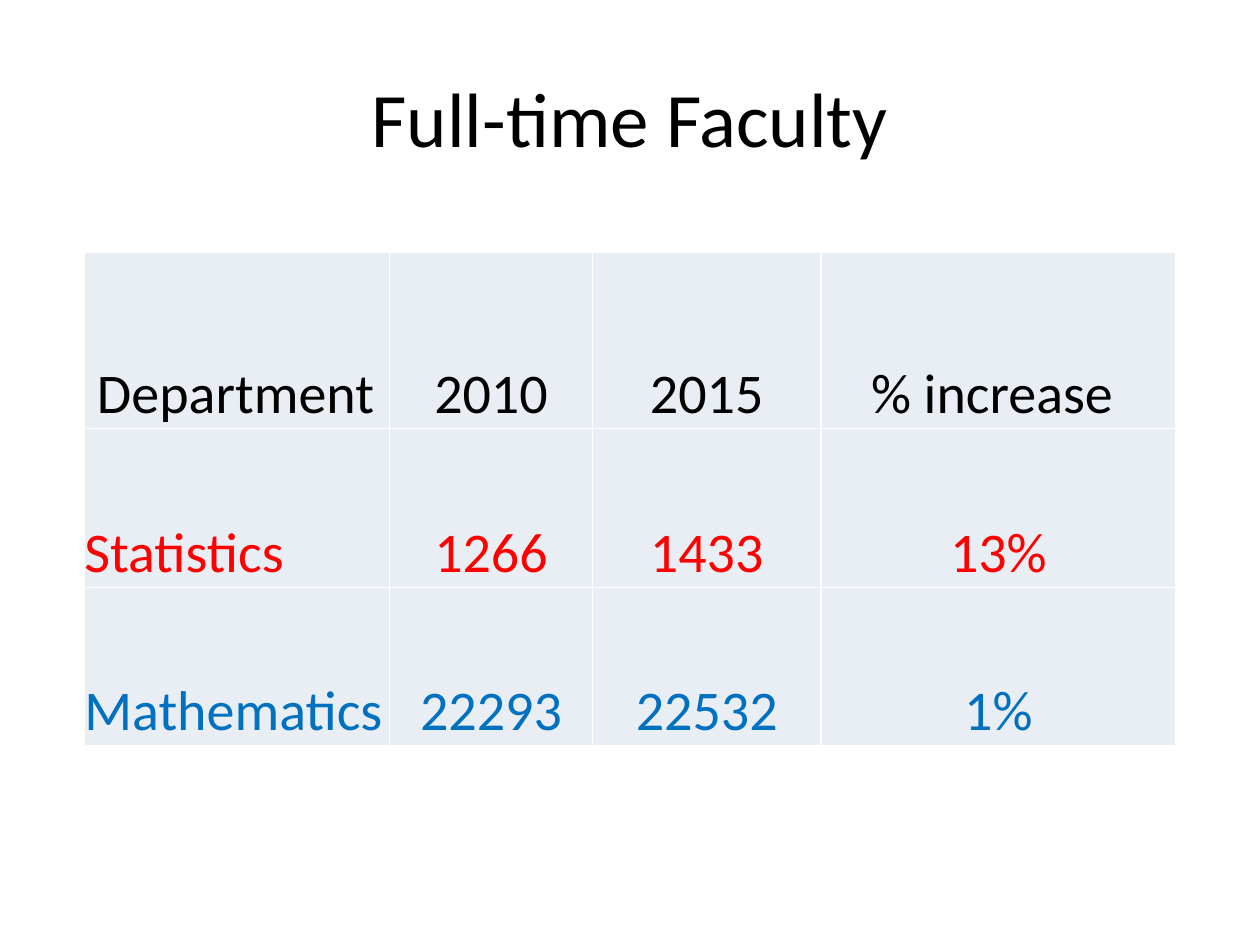
from lxml.etree import SubElement
from pptx import Presentation
from pptx.dml.color import RGBColor
from pptx.enum.text import MSO_ANCHOR as Anchor, PP_ALIGN as Align
from pptx.oxml.ns import qn
from pptx.util import Cm, Pt

COLORS = {
    "text": "000000",
    "statistics": "FF0000",
    "mathematics": "0070C0",
    "cell": "E9EDF4",
    "border": "FFFFFF",
}


def write(frame, text, size=32, color="text", align=Align.CENTER):
    paragraph = frame.paragraphs[0]
    paragraph.alignment = align
    run = paragraph.add_run()
    run.text = text
    run.font.name = "Calibri"
    run.font.size = Pt(size)
    run.font.color.rgb = RGBColor.from_string(COLORS[color])


def set_borders(cell, color, width):
    """Draw all four cell edges; they must precede the fill in the XML."""
    properties = cell._tc.get_or_add_tcPr()
    for edge in ("a:lnL", "a:lnR", "a:lnT", "a:lnB"):
        line = SubElement(properties, qn(edge), w=str(Pt(width)))
        fill = SubElement(line, qn("a:solidFill"))
        SubElement(fill, qn("a:srgbClr"), val=COLORS[color])


prs = Presentation()
prs.slide_width, prs.slide_height = Cm(25.4), Cm(19.05)
slide = prs.slides.add_slide(prs.slide_layouts[5])

title = slide.shapes.title
title.left, title.top = Cm(1.27), Cm(0.76)
title.width, title.height = Cm(22.86), Cm(3.18)
title.text_frame.vertical_anchor = Anchor.MIDDLE
write(title.text_frame, "Full-time Faculty", size=44)

faculty = [
    ("text", [" Department", "2010", "2015", "% increase "]),
    ("statistics", ["Statistics", "1266", "1433", "13%"]),
    ("mathematics", ["Mathematics", "22293", "22532", "1%"]),
]
column_widths = [6.15, 4.1, 4.6, 7.16]
row_heights = [3.56, 3.2, 3.2]

table = slide.shapes.add_table(
    len(row_heights), len(column_widths), Cm(1.7), Cm(5.08),
    Cm(sum(column_widths)), Cm(sum(row_heights)),
).table
table.first_row = False
table.horz_banding = False
for column, width in zip(table.columns, column_widths):
    column.width = Cm(width)
for row, height in zip(table.rows, row_heights):
    row.height = Cm(height)

for row, (color, values) in zip(table.rows, faculty):
    for index, (cell, value) in enumerate(zip(row.cells, values)):
        set_borders(cell, "border", 1)
        cell.fill.solid()
        cell.fill.fore_color.rgb = RGBColor.from_string(COLORS["cell"])
        cell.margin_left = cell.margin_right = 0
        cell.margin_top = cell.margin_bottom = 0
        cell.vertical_anchor = Anchor.BOTTOM
        write(cell.text_frame, value, color=color,
              align=Align.CENTER if index else Align.LEFT)

prs.save("out.pptx")
